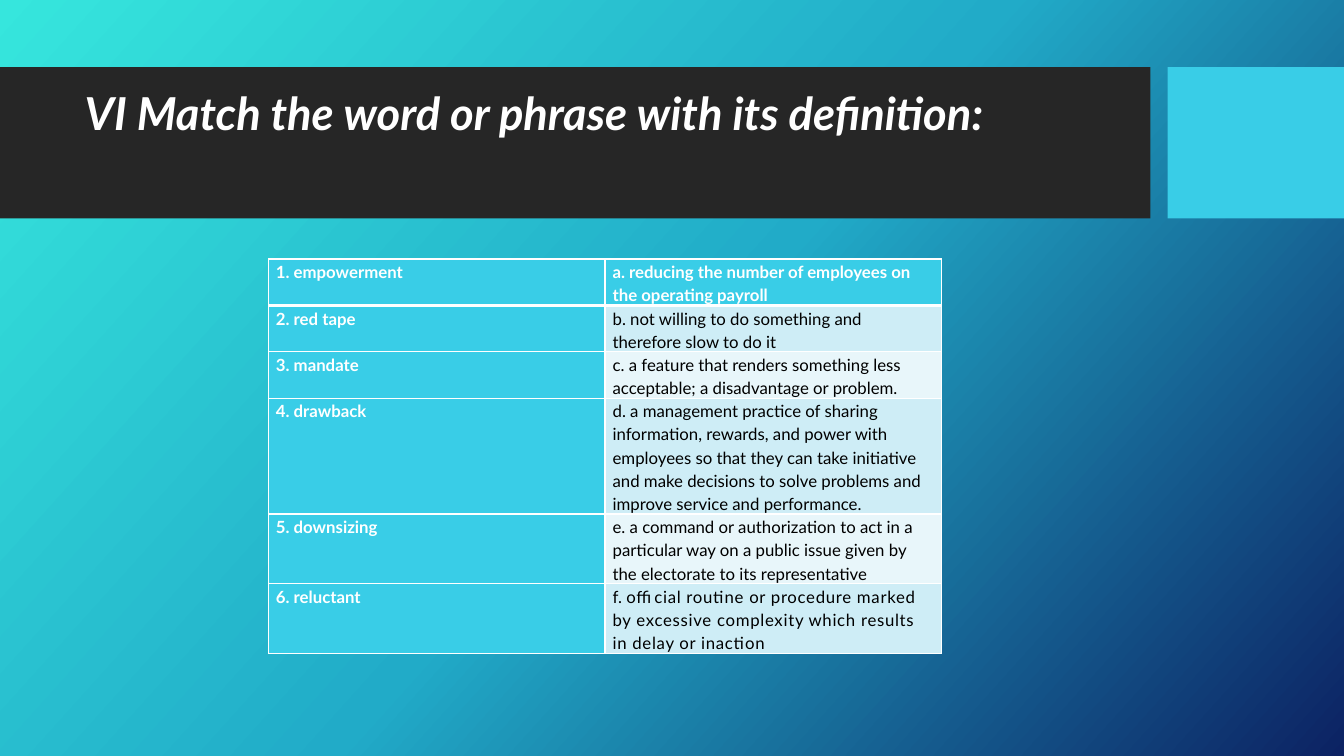
from copy import deepcopy
from dataclasses import dataclass

from lxml import etree
from pptx import Presentation
from pptx.dml.color import RGBColor as RGB
from pptx.enum.shapes import MSO_SHAPE as Shape
from pptx.enum.text import MSO_ANCHOR as Anchor, MSO_AUTO_SIZE as AutoSize, PP_ALIGN as Align
from pptx.oxml.ns import qn
from pptx.util import Pt


@dataclass(frozen=True)
class Theme:
    font: str = "Lato"
    title_size: float = 32.4
    body_size: float = 12
    white: str = "FFFFFF"
    black: str = "000000"
    banner: str = "262626"
    accent: str = "39CDE7"
    bands: tuple = ("CEEDF6", "E8F6FA")
    backdrop: tuple = ((0, "36E6DD"), (0.5, "21ABC8"), (1, "0C2263"))


THEME = Theme()
LINE_HEIGHT = 16.56

# term, label of the definition, definition, number of lines it takes, letter spacing
MATCHES = [
    ("1. empowerment", "a. ", "reducing the number of employees on the operating payroll", 2, 0),
    ("2. red tape", "b. ", "not willing to do something and therefore slow to do it", 2, 0),
    ("3. mandate", "c. ",
     "a feature that renders something less acceptable; a disadvantage or problem.", 2, 0),
    ("4. drawback", "d. ",
     "a management practice of sharing information, rewards, and power with employees so that "
     "they can take initiative and make decisions to solve problems and improve service and "
     "performance.", 5, 0),
    ("5. downsizing", "e. ",
     "a command or authorization to act in a particular way on a public issue given by the "
     "electorate to its representative", 3, 0),
    ("6. reluctant", "f. ",
     "official routine or procedure marked by excessive complexity which results in delay or "
     "inaction", 3, 0.5),
]


def style_font(font, size, color, bold=False, italic=False):
    font.name, font.size = THEME.font, Pt(size)
    font.bold, font.italic = bold, italic
    font.color.rgb = RGB.from_string(color)


def paint_backdrop(slide):
    fill = slide.background.fill
    fill.gradient()
    fill.gradient_angle = 360 - 42
    stop_list = fill._fill._gradFill.find(qn("a:gsLst"))
    stop_list.insert(1, deepcopy(stop_list[0]))
    for stop, (position, color) in zip(fill.gradient_stops, THEME.backdrop):
        stop.position = position
        stop.color.rgb = RGB.from_string(color)


def add_block(slide, left, top, width, height, color):
    block = slide.shapes.add_shape(Shape.RECTANGLE, Pt(left), Pt(top), Pt(width), Pt(height))
    block.shadow.inherit = False
    block.fill.solid()
    block.fill.fore_color.rgb = RGB.from_string(color)
    block.line.fill.background()


def add_banner(slide, left, top, width, height):
    """Dark title bar with an accent block at its right end."""
    accent_width, gap = 126, 12.3
    bar_width = width - accent_width - gap
    add_block(slide, left, top, bar_width, height, THEME.banner)
    add_block(slide, left + width - accent_width, top, accent_width, height, THEME.accent)

    title = slide.shapes.title
    slide.shapes._spTree.append(title._element)  # bring in front of the bar
    title.left, title.top = Pt(left + 53.3), Pt(top + 10.8)
    title.width, title.height = Pt(bar_width - 64.8), Pt(85)
    frame = title.text_frame
    frame.text = "VI Match the word or phrase with its definition:"
    frame.auto_size, frame.word_wrap = AutoSize.NONE, True
    frame.vertical_anchor, frame.margin_top = Anchor.TOP, Pt(6.5)
    heading = frame.paragraphs[0]
    heading.alignment, heading.line_spacing = Align.LEFT, 0.9
    style_font(heading.font, THEME.title_size, THEME.white, bold=True, italic=True)


def set_borders(cell, **widths):
    properties = cell._tc.get_or_add_tcPr()
    for side in "LRTB":
        line = etree.SubElement(properties, qn(f"a:ln{side}"), w=str(Pt(widths.get(side, 1))))
        color = etree.SubElement(etree.SubElement(line, qn("a:solidFill")), qn("a:srgbClr"))
        color.set("val", THEME.white)


def fill_cell(cell, parts, fill, color, bold, **borders):
    """Write (text, letter spacing) parts into one bordered cell."""
    set_borders(cell, **borders)
    cell.fill.solid()
    cell.fill.fore_color.rgb = RGB.from_string(fill)
    cell.margin_left = cell.margin_right = Pt(5.4)
    cell.margin_top = cell.margin_bottom = 0
    paragraph = cell.text_frame.paragraphs[0]
    paragraph.line_spacing = 1.15
    style_font(paragraph.font, THEME.body_size, color, bold)
    for text, spacing in parts:
        run = paragraph.add_run()
        run.text = text
        if spacing:
            run.font._element.set("spc", str(int(spacing * 100)))


def add_matches(slide, left, top, width):
    height = LINE_HEIGHT * sum(lines for *_, lines, _ in MATCHES)
    table = slide.shapes.add_table(len(MATCHES), 2, Pt(left), Pt(top), Pt(width), Pt(height)).table
    for column in table.columns:
        column.width = Pt(width / 2)
    for index, (term, label, definition, lines, spacing) in enumerate(MATCHES):
        table.rows[index].height = Pt(LINE_HEIGHT * lines)
        borders = {0: {"B": 3}, 1: {"T": 3}}.get(index, {})
        header = index == 0
        fill = THEME.accent if header else THEME.bands[(index - 1) % 2]
        color = THEME.white if header else THEME.black
        parts = [(label, 0), (definition, spacing)] if spacing else [(label + definition, 0)]
        fill_cell(table.cell(index, 0), [(term, 0)], THEME.accent, THEME.white, True, **borders)
        fill_cell(table.cell(index, 1), parts, fill, color, header, **borders)


def main():
    deck = Presentation()
    deck.slide_width, deck.slide_height = Pt(960), Pt(540)
    slide = deck.slides.add_slide(deck.slide_layouts[5])
    paint_backdrop(slide)
    add_banner(slide, 0, 48, 960, 108)
    add_matches(slide, 191.7, 185, 481)
    deck.save("out.pptx")


if __name__ == "__main__":
    main()
